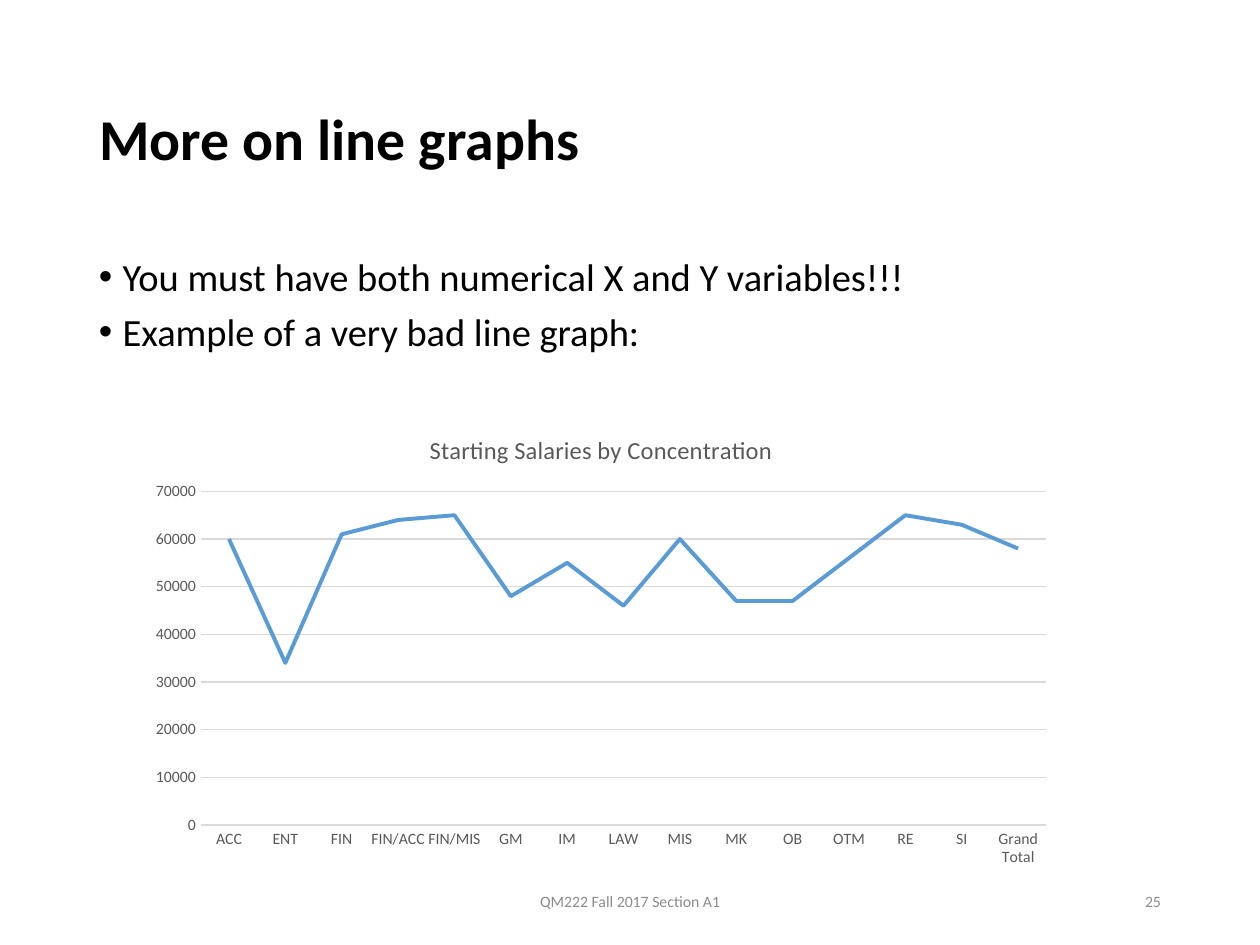
from dataclasses import dataclass

from lxml import etree
from pptx import Presentation
from pptx import util as u
from pptx.chart.data import CategoryChartData
from pptx.dml.color import RGBColor
from pptx.enum import chart as ch
from pptx.enum import text
from pptx.oxml.ns import qn

FONT = "Calibri"
BLACK = RGBColor(0x00, 0x00, 0x00)
FOOTER_GRAY = RGBColor(0x8C, 0x8C, 0x8C)
LABEL_GRAY = RGBColor(0x59, 0x59, 0x59)
GRID_GRAY = RGBColor(0xD9, 0xD9, 0xD9)
LINE_BLUE = RGBColor(0x5B, 0x9B, 0xD5)
LEFT, RIGHT, CENTER = text.PP_ALIGN.LEFT, text.PP_ALIGN.RIGHT, text.PP_ALIGN.CENTER
TOP, MIDDLE = text.MSO_ANCHOR.TOP, text.MSO_ANCHOR.MIDDLE

BULLETS = [
    "You must have both numerical X and Y variables!!!",
    "Example of a very bad line graph:",
]
SALARIES = {
    "ACC": 60000, "ENT": 34000, "FIN": 61000, "FIN/ACC": 64000, "FIN/MIS": 65000,
    "GM": 48000, "IM": 55000, "LAW": 46000, "MIS": 60000, "MK": 47000, "OB": 47000,
    "OTM": 56000, "RE": 65000, "SI": 63000, "Grand Total": 58000,
}


@dataclass(frozen=True)
class Box:
    """Left, top, width and height in points."""
    left: float
    top: float
    width: float
    height: float

    def lengths(self) -> list:
        return [u.Pt(v) for v in (self.left, self.top, self.width, self.height)]


@dataclass(frozen=True)
class FooterItem:
    label: str
    box: Box
    align: text.PP_ALIGN


TITLE_BOX = Box(49.5, 28.75, 621, 104.5)
BODY_BOX = Box(49.5, 144, 621, 342.5)
CHART_BOX = Box(78.5, 235.5, 530, 265)
FOOTERS = [
    FooterItem("QM222 Fall 2017 Section A1", Box(238.5, 500.5, 243, 28.75), CENTER),
    FooterItem("25", Box(508.5, 500.5, 162, 28.75), RIGHT),
]


def set_font(font, size: float, color: RGBColor, bold: bool = False) -> None:
    font.name, font.size, font.bold = FONT, u.Pt(size), bold
    font.color.rgb = color


def add_bullet(p, indent: float = 13.5) -> None:
    pPr = p._p.get_or_add_pPr()
    pPr.set("marL", str(u.Pt(indent)))
    pPr.set("indent", str(-u.Pt(indent)))
    etree.SubElement(pPr, qn("a:buFont")).set("typeface", "Arial")
    etree.SubElement(pPr, qn("a:buChar")).set("char", "•")


def write(tf, lines: list[str], *, size: float, color: RGBColor = BLACK,
          bold: bool = False, align=LEFT, anchor=TOP, spacing: float = 1.0,
          before: float = 0, bullet: bool = False) -> None:
    tf.word_wrap, tf.vertical_anchor = True, anchor
    tf.auto_size = text.MSO_AUTO_SIZE.NONE
    for i, line in enumerate(lines):
        p = tf.add_paragraph() if i else tf.paragraphs[0]
        p.alignment, p.line_spacing, p.space_before = align, spacing, u.Pt(before)
        if bullet:
            add_bullet(p)
        r = p.add_run()
        r.text = line
        set_font(r.font, size, color, bold)


def add_text(s, box: Box, lines: list[str], **fmt) -> None:
    write(s.shapes.add_textbox(*box.lengths()).text_frame, lines, **fmt)


def add_salary_chart(s, box: Box) -> None:
    data = CategoryChartData()
    data.categories = list(SALARIES)
    data.add_series("Series 1", list(SALARIES.values()))
    chart = s.shapes.add_chart(ch.XL_CHART_TYPE.LINE, *box.lengths(), data).chart
    set_font(chart.font, 10, BLACK)
    chart.has_legend = False

    # Chart title
    p = chart.chart_title.text_frame.paragraphs[0]
    r = p.add_run()
    r.text = "Starting Salaries by Concentration"
    set_font(r.font, 14, LABEL_GRAY)
    chart.chart_title.include_in_layout = False

    # Axes and gridlines
    for axis in (chart.category_axis, chart.value_axis):
        axis.major_tick_mark = axis.minor_tick_mark = ch.XL_TICK_MARK.NONE
        set_font(axis.tick_labels.font, 9, LABEL_GRAY)
    values = chart.value_axis
    values.minimum_scale, values.maximum_scale, values.major_unit = 0, 70000, 10000
    values.format.line.fill.background()
    values.has_major_gridlines = True
    for line in (chart.category_axis.format.line, values.major_gridlines.format.line):
        line.color.rgb, line.width = GRID_GRAY, u.Pt(0.75)

    # Salary line
    plot = chart.plots[0]
    plot.vary_by_categories = False
    series = plot.series[0]
    series.smooth = False
    series.marker.style = ch.XL_MARKER_STYLE.NONE
    series.format.line.color.rgb = LINE_BLUE
    series.format.line.width = u.Pt(2.25)


def main() -> None:
    prs = Presentation()
    prs.slide_width, prs.slide_height = u.Pt(720), u.Pt(540)
    s = prs.slides.add_slide(prs.slide_layouts[5])

    # Title
    title = s.shapes.title
    title.left, title.top, title.width, title.height = TITLE_BOX.lengths()
    write(title.text_frame, ["More on line graphs"], size=33, bold=True,
          anchor=MIDDLE, spacing=0.9)

    # Bullets, footer and chart
    add_text(s, BODY_BOX, BULLETS, size=22, spacing=0.9, before=7.5, bullet=True)
    for item in FOOTERS:
        add_text(s, item.box, [item.label], size=9, color=FOOTER_GRAY,
                 align=item.align, anchor=MIDDLE)
    add_salary_chart(s, CHART_BOX)

    prs.save("out.pptx")


if __name__ == "__main__":
    main()
